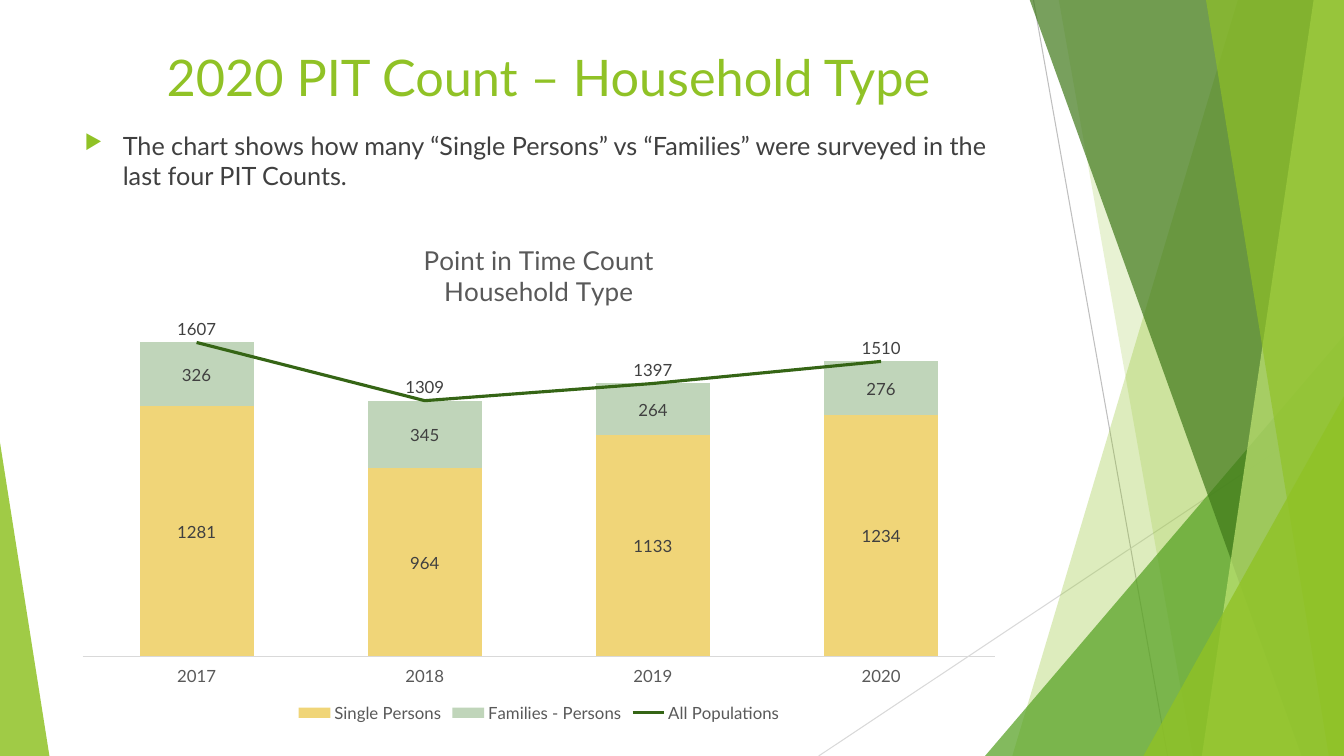
from lxml import etree
from pptx import Presentation
from pptx.chart.data import CategoryChartData
from pptx.dml.color import RGBColor
from pptx.enum.chart import XL_CHART_TYPE as CT, XL_LABEL_POSITION as LP, XL_LEGEND_POSITION
from pptx.enum.chart import XL_MARKER_STYLE, XL_TICK_LABEL_POSITION, XL_TICK_MARK
from pptx.enum.shapes import MSO_CONNECTOR, MSO_SHAPE
from pptx.enum.text import MSO_ANCHOR, PP_ALIGN
from pptx.oxml import parse_xml
from pptx.oxml.ns import nsdecls, qn
from pptx.util import Inches, Pt

LIME = RGBColor(0x90, 0xC2, 0x26)
GREEN = RGBColor(0x54, 0xA0, 0x21)
FOREST = RGBColor(0x3F, 0x78, 0x19)
PALE = RGBColor(0xC0, 0xE4, 0x74)
SILVER = RGBColor(0xBF, 0xBF, 0xBF)
LIGHT = RGBColor(0xD9, 0xD9, 0xD9)
DARK = RGBColor(0x40, 0x40, 0x40)
GREY = RGBColor(0x59, 0x59, 0x59)
SAND = RGBColor(0xF0, 0xD5, 0x78)
SAGE = RGBColor(0xC0, 0xD5, 0xBA)
PINE = RGBColor(0x35, 0x65, 0x15)
FONT = "Lato"
W, H = 13.33, 7.5

prs = Presentation()
prs.slide_width, prs.slide_height = Inches(W), Inches(H)
s = prs.slides.add_slide(prs.slide_layouts[6])


def paint(sp, color, opacity):
    sp.shadow.inherit = False
    sp.fill.solid()
    sp.fill.fore_color.rgb = color
    sp.line.fill.background()
    clr = sp._element.spPr.find(qn("a:solidFill"))[0]
    etree.SubElement(clr, qn("a:alpha")).set("val", str(opacity * 1000))


def set_font(font, size, color):
    font.name, font.size, font.color.rgb = FONT, Pt(size), color


for x1, y1, x2, y2, color in [(10.25, 0, 11.58, H, SILVER), (W, 4.03, 8.12, H, LIGHT)]:
    line = s.shapes.add_connector(MSO_CONNECTOR.STRAIGHT, Inches(x1), Inches(y1), Inches(x2), Inches(y2))
    line.line.color.rgb = color
    line.line.width = Pt(0.75)
    etree.SubElement(line._element.spPr, qn("a:effectLst"))

facets = [
    ("band", 12.28, 10.04, LIME, 30),
    ("band", 10.5, 11.83, LIME, 20),
    ("triangle", 9.77, 3.33, 3.56, 1, GREEN, 72),
    ("band", 10.21, 12.91, FOREST, 70),
    ("band", 13.03, 11.92, PALE, 70),
    ("band", 11.96, 13.18, LIME, 65),
    ("triangle", 11.34, 3.93, 1.99, 1, LIME, 80),
    ("triangle", 0, 4.39, 0.49, 0, LIME, 85),
]
for kind, *geometry, color, opacity in facets:
    if kind == "band":
        top_x, bottom_x = geometry
        fb = s.shapes.build_freeform(Inches(top_x), Inches(-0.01))
        fb.add_line_segments([(Inches(x), Inches(y)) for x, y in [(W, -0.01), (W, H), (bottom_x, H)]])
        sp = fb.convert_to_shape()
    else:
        x, y, width, apex = geometry
        sp = s.shapes.add_shape(MSO_SHAPE.ISOSCELES_TRIANGLE, Inches(x), Inches(y), Inches(width), Inches(H - y))
        sp.adjustments[0] = apex
    paint(sp, color, opacity)

texts = [
    ("2020 PIT Count – Household Type", 0.41, 0.98, 36, LIME),
    ("The chart shows how many “Single Persons” vs “Families” were surveyed in the last four PIT Counts.",
     1.24, 0.85, 18, DARK),
]
for text, y, height, size, color in texts:
    tf = s.shapes.add_textbox(Inches(0.74), Inches(y), Inches(9.4), Inches(height)).text_frame
    tf.word_wrap = True
    tf.vertical_anchor = MSO_ANCHOR.TOP
    p = tf.paragraphs[0]
    p.text = text
    set_font(p.runs[0].font, size, color)
    if color == LIME:
        p.alignment = PP_ALIGN.CENTER
    else:
        pPr = p._p.get_or_add_pPr()
        pPr.set("marL", str(Inches(0.38)))
        pPr.set("indent", str(Inches(-0.38)))
        etree.SubElement(etree.SubElement(pPr, qn("a:buClr")), qn("a:srgbClr")).set("val", str(LIME))
        etree.SubElement(pPr, qn("a:buSzPct")).set("val", "80000")
        etree.SubElement(pPr, qn("a:buChar")).set("char", "▶")

data = CategoryChartData()
data.categories = ["2017", "2018", "2019", "2020"]
data.add_series("Single Persons", (1281, 964, 1133, 1234))
data.add_series("Families - Persons", (326, 345, 264, 276))
data.add_series("All Populations", (1607, 1309, 1397, 1510))
chart = s.shapes.add_chart(CT.COLUMN_STACKED, Inches(0.63), Inches(2.22), Inches(9.43), Inches(4.99), data).chart
set_font(chart.font, 12, GREY)

tf = chart.chart_title.text_frame
tf.text = "Point in Time Count\nHousehold Type"
for p in tf.paragraphs:
    set_font(p.runs[0].font, 18.6, GREY)
    p.runs[0].font.bold = False
chart.chart_title.include_in_layout = False

chart.has_legend = True
chart.legend.position = XL_LEGEND_POSITION.BOTTOM
chart.legend.include_in_layout = False
set_font(chart.legend.font, 12, GREY)

years = chart.category_axis
years.major_tick_mark = XL_TICK_MARK.NONE
years.tick_label_position = XL_TICK_LABEL_POSITION.LOW
years.format.line.color.rgb = LIGHT
years.format.line.width = Pt(0.75)
set_font(years.tick_labels.font, 12, GREY)
counts = chart.value_axis
counts.minimum_scale, counts.maximum_scale = 0, 1700
counts.has_major_gridlines = False
counts.visible = False

bars = chart.plots[0]
bars.gap_width, bars.overlap = 100, 100
bars.vary_by_categories = False
bar_xml = bars._element
total = bar_xml.findall(qn("c:ser"))[2]
for flag in total.findall(qn("c:invertIfNegative")):
    total.remove(flag)
line_xml = parse_xml(f'<c:lineChart {nsdecls("c")}><c:grouping val="standard"/><c:varyColors val="0"/></c:lineChart>')
line_xml.append(total)
etree.SubElement(line_xml, qn("c:marker")).set("val", "1")
for axis_id in bar_xml.findall(qn("c:axId")):
    etree.SubElement(line_xml, qn("c:axId")).set("val", axis_id.get("val"))
bar_xml.addnext(line_xml)

plot_area = bar_xml.getparent()
for layout in plot_area.findall(qn("c:layout")):
    plot_area.remove(layout)
plot_area.insert(0, parse_xml(
    f'<c:layout {nsdecls("c")}><c:manualLayout><c:layoutTarget val="inner"/>'
    '<c:xMode val="edge"/><c:yMode val="edge"/><c:x val="0.02"/><c:y val="0.2"/>'
    '<c:w val="0.96"/><c:h val="0.66"/></c:manualLayout></c:layout>'))

singles, families = chart.plots[0].series
populations = chart.plots[1].series[0]
for series, color, position in [(singles, SAND, LP.CENTER), (families, SAGE, LP.CENTER), (populations, PINE, LP.ABOVE)]:
    if position == LP.ABOVE:
        series.smooth = False
        series.marker.style = XL_MARKER_STYLE.NONE
        series.format.line.color.rgb = color
        series.format.line.width = Pt(2.25)
    else:
        series.format.fill.solid()
        series.format.fill.fore_color.rgb = color
    labels = series.data_labels
    labels.show_value = True
    labels.position = position
    set_font(labels.font, 12, DARK)

prs.save("out.pptx")
